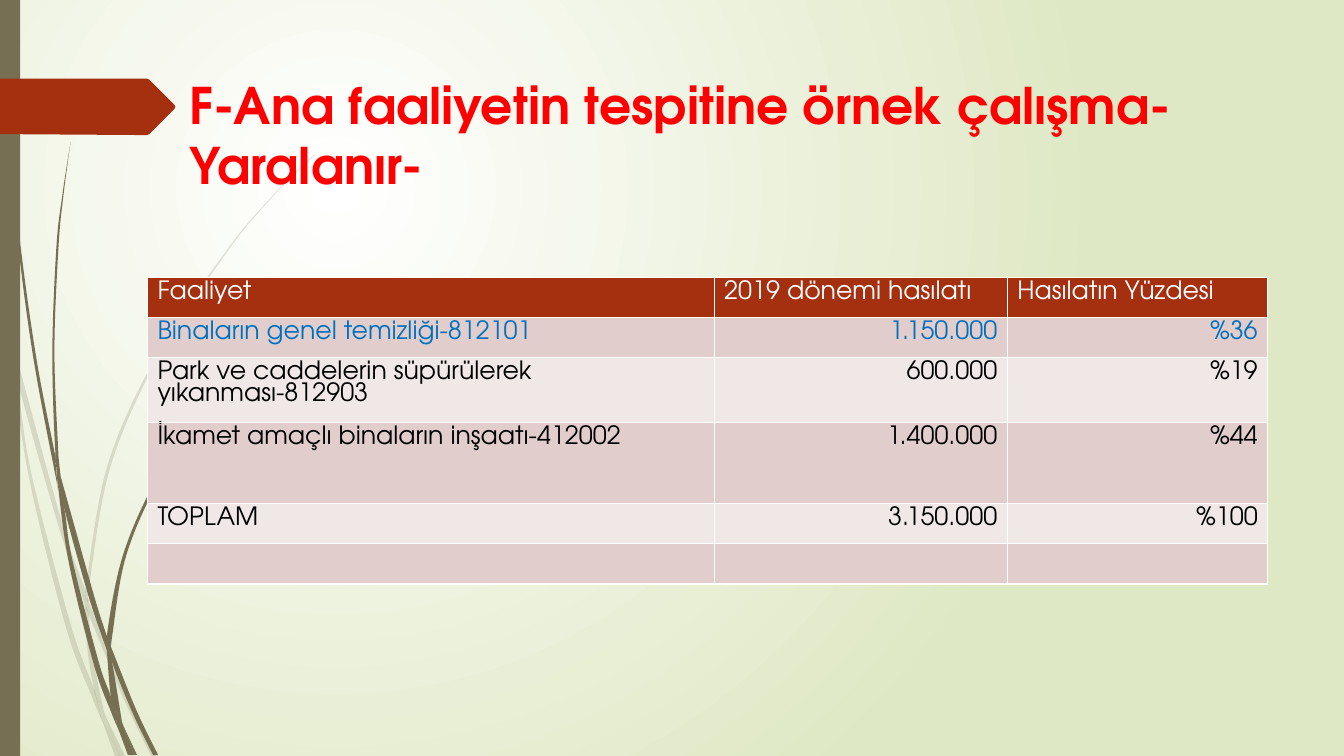
from typing import NamedTuple

from pptx import Presentation
from pptx.dml.color import RGBColor as Rgb
from pptx.enum.shapes import MSO_SHAPE as Kind
from pptx.enum.text import MSO_ANCHOR as Anchor, PP_ALIGN as Align
from pptx.oxml import parse_xml
from pptx.oxml.ns import nsdecls, qn
from pptx.util import Pt

FONT = "TeX Gyre Adventor"
HUES = {
    "white": "FFFFFF", "lime": "DFE8C4", "olive": "766F54", "rust": "A53010",
    "red": "FF0000", "blue": "0070C0", "black": "000000",
    "rose": "E1CDCC", "pale": "F0E8E7",
}
Edge = list[tuple[float, float]]


class Blade(NamedTuple):
    """A piece of grass: one edge out, the other edge back."""
    out: Edge
    back: Edge


class Row(NamedTuple):
    cells: tuple[str, str, str]
    high: float
    fill: str
    ink: str = "black"


FAINT = [
    Blade([(7.9, 252), (6.5, 231.8), (0, 203)], [(0, 215.3), (7.2, 247.7), (7.9, 252)]),
    Blade([(10.1, 248.4), (12.2, 270.7), (41.8, 375.8), (60.5, 431.3)],
          [(61.2, 421.9), (44.6, 374.4), (10.1, 248.4)]),
    Blade([(63.4, 429.1), (66.2, 437), (91.4, 498.2), (111.6, 540)],
          [(108, 540), (88.6, 499.7), (63.4, 439.2)]),
    Blade([(75.6, 511.9), (85.7, 540)], [(89.3, 540), (75.6, 511.9)]),
    Blade([(7.9, 252), (20.2, 338.4), (46.8, 447.1), (66.2, 499), (72.7, 514.1)],
          [(71.3, 509), (67, 491.8), (50.4, 445.7), (22.3, 337.7), (12.2, 270.7), (7.9, 252)]),
    Blade([(60.5, 431.3), (62.6, 465.1), (67, 491.8), (69.1, 498.2), (75.6, 511.9)],
          [(74.2, 508.3), (65.5, 465.1), (63.4, 439.2), (60.5, 431.3)]),
    Blade([(63.4, 429.1), (63.4, 420.5), (79.2, 332.6), (115.2, 251.3), (164.9, 176.4),
           (193, 142.6), (208.8, 126), (224.6, 110.9)],
          [(224.6, 110.2), (208.1, 126), (193, 141.8), (164.2, 175.7), (113.8, 250.6),
           (77, 331.9), (61.2, 420.5), (61.2, 421.9)]),
    Blade([(72.7, 514.1), (82.1, 540)], [(85.7, 540), (72.7, 514.1)]),
    Blade([(60.5, 431.3), (63.4, 439.2)], [(63.4, 429.1), (61.2, 421.9)]),
    Blade([(67, 491.8), (71.3, 509), (72.7, 514.1), (85.7, 540)],
          [(75.6, 511.9), (69.1, 498.2), (67, 491.8)]),
]
DARK = [
    Blade([(2.2, 0), (2.9, 34.6), (5, 79.2), (12.2, 167.8), (23.8, 255.6), (40.3, 343.4),
           (41, 346.3)],
          [(39.6, 329), (39.6, 326.2), (25.9, 255.6), (13.7, 167), (5.8, 78.5), (3.6, 34.6),
           (2.9, 0)]),
    Blade([(43.2, 339.8), (46.1, 363.6), (63.4, 426.2), (76.3, 464.4)],
          [(76.3, 454.3), (67, 424.8), (43.2, 339.8)]),
    Blade([(79.2, 461.5), (79.9, 472.3), (95, 509.8), (109.4, 539.3)],
          [(113, 539.3), (97.9, 508.3), (81.4, 467.3), (79.2, 461.5)]),
    Blade([(41, 343.4), (49, 401), (67, 474.5), (79.9, 509.8), (84.2, 519.8)],
          [(83.5, 516.2), (79.2, 497.5), (70.6, 473), (51.8, 400.3), (46.1, 363.6), (41, 343.4)]),
    Blade([(50.4, 101.5), (44.6, 139), (40.3, 176.4), (37.4, 251.3), (39.6, 323.3), (43.2, 339.8)],
          [(41.8, 326.2), (38.9, 251.3), (41.8, 176.4), (45.4, 139), (50.4, 101.5)]),
    Blade([(87.8, 517.7), (95.8, 539.3)], [(97.9, 539.3), (87.8, 517.7)]),
    Blade([(39.6, 323.3), (39.6, 326.2), (41, 343.4)],
          [(46.1, 363.6), (43.2, 339.8), (39.6, 323.3)]),
    Blade([(79.9, 455.8), (90, 397.4), (113.8, 342.7), (147.6, 292.3), (166.3, 269.3),
           (176.4, 258.5), (187.9, 247.7)],
          [(187.2, 247.7), (176.4, 257.8), (166.3, 268.6), (146.9, 291.6), (112.3, 341.3),
           (87.8, 396.7), (76.3, 454.3), (79.2, 461.5)]),
    Blade([(84.2, 519.8), (91.4, 539.3)], [(94.3, 539.3), (84.2, 519.8)]),
    Blade([(76.3, 464.4), (79.2, 497.5), (83.5, 508.3), (87.8, 517.7)],
          [(87.1, 515.5), (79.9, 472.3), (76.3, 464.4)]),
    Blade([(76.3, 464.4), (79.9, 472.3)], [(79.2, 461.5), (76.3, 454.3)]),
    Blade([(79.2, 497.5), (83.5, 516.2), (84.2, 519.8), (93.6, 539.3)],
          [(95.8, 539.3), (87.8, 517.7), (83.5, 508.3), (79.2, 497.5)]),
]
TAG = [(0, 56.2), (105.1, 56.2), (106.6, 56.9), (124.6, 74.9), (125.3, 76.3),
       (124.6, 77.8), (106.6, 95.8), (105.1, 96.5), (0, 95.8)]
COLS = (404.8, 209.5, 186)
ROWS = [
    Row(("Faaliyet", "2019 dönemi hasılatı", "Hasılatın Yüzdesi"), 28.8, "rust", "white"),
    Row(("Binaların genel temizliği-812101", "1.150.000", "%36"), 28.8, "rose", "blue"),
    Row(("Park ve caddelerin süpürülerek yıkanması-812903", "600.000", "%19"), 40.8, "pale"),
    Row(("İkamet amaçlı binaların inşaatı-412002", "1.400.000", "%44"), 57.8, "rose"),
    Row(("TOPLAM", "3.150.000", "%100"), 28.8, "pale"),
    Row(("", "", ""), 28.8, "rose"),
]


def hue(name: str) -> Rgb:
    return Rgb.from_string(HUES[name])


def paint(shape, name: str, alpha: int = 100) -> None:
    shape.shadow.inherit = False
    shape.line.fill.background()
    shape.fill.solid()
    shape.fill.fore_color.rgb = hue(name)
    if alpha < 100:
        tint = next(shape._element.spPr.iter(qn("a:srgbClr")))
        tint.append(parse_xml(f'<a:alpha {nsdecls("a")} val="{alpha * 1000}"/>'))


def outline(slide, pts: Edge, name: str, alpha: int = 100):
    spots = [(Pt(x), Pt(y)) for x, y in pts]
    pen = slide.shapes.build_freeform(*spots[0])
    pen.add_line_segments(spots[1:], close=True)
    shape = pen.convert_to_shape()
    paint(shape, name, alpha)
    return shape


def bends(edge: Edge) -> list[Edge]:
    """Bezier points of a Catmull-Rom curve, three for each stretch."""
    pts = [edge[0], *edge, edge[-1]]
    return [[(b[0] + (c[0] - a[0]) / 6, b[1] + (c[1] - a[1]) / 6),
             (c[0] - (d[0] - b[0]) / 6, c[1] - (d[1] - b[1]) / 6), c]
            for a, b, c, d in zip(pts, pts[1:], pts[2:], pts[3:])]


def grow(slide, blade: Blade, alpha: int) -> None:
    """Draw a blade, bending both of its edges."""
    shape = outline(slide, blade.out + blade.back, "olive", alpha)
    lines = list(shape._element.iter(qn("a:lnTo")))
    for line, bend in zip(lines, bends(blade.out) + [[]] + bends(blade.back)):
        if bend:
            dots = "".join(f'<a:pt x="{Pt(x) - shape.left}" y="{Pt(y) - shape.top}"/>'
                           for x, y in bend)
            line.getparent().replace(line, parse_xml(
                f'<a:cubicBezTo {nsdecls("a")}>{dots}</a:cubicBezTo>'))


def backdrop(slide) -> None:
    """Round gradient with its centre in the upper left."""
    fill = slide.background.fill
    fill.gradient()
    for stop, name, place in zip(fill.gradient_stops, ("white", "lime"), (0, 1)):
        stop.color.rgb = hue(name)
        stop.position = place
    line = next(slide._element.iter(qn("a:lin")))
    line.getparent().replace(line, parse_xml(
        f'<a:path {nsdecls("a")} path="circle">'
        '<a:fillToRect l="50000" t="50000" r="100000" b="100000"/></a:path>'))


def title(slide, text: str) -> None:
    frame = slide.shapes.add_textbox(Pt(128.2), Pt(49.3), Pt(777.6), Pt(100.8)).text_frame
    frame.word_wrap = True
    frame.vertical_anchor = Anchor.TOP
    para = frame.paragraphs[0]
    para.text = text
    font = para.font
    font.name, font.size, font.bold = FONT, Pt(36), True
    font.color.rgb = hue("red")


def border(cell) -> None:
    for side in "LRTB":
        cell._tc.get_or_add_tcPr().append(parse_xml(
            f'<a:ln{side} {nsdecls("a")} w="{Pt(1)}"><a:solidFill>'
            f'<a:srgbClr val="{HUES["white"]}"/></a:solidFill></a:ln{side}>'))


def table(slide) -> None:
    high = sum(row.high for row in ROWS)
    grid = slide.shapes.add_table(len(ROWS), len(COLS), Pt(105.3), Pt(198),
                                  Pt(sum(COLS)), Pt(high)).table
    for col, wide in zip(grid.columns, COLS):
        col.width = Pt(wide)
    for i, row in enumerate(ROWS):
        grid.rows[i].height = Pt(row.high)
        for j, text in enumerate(row.cells):
            cell = grid.cell(i, j)
            border(cell)
            cell.fill.solid()
            cell.fill.fore_color.rgb = hue(row.fill)
            para = cell.text_frame.paragraphs[0]
            para.text = text
            para.line_spacing = 0.9
            para.alignment = Align.RIGHT if i and j else Align.LEFT
            font = para.font
            font.name, font.size, font.bold = FONT, Pt(18), False
            font.color.rgb = hue(row.ink)


def main() -> None:
    deck = Presentation()
    deck.slide_width, deck.slide_height = Pt(960), Pt(540)
    slide = deck.slides.add_slide(deck.slide_layouts[6])
    backdrop(slide)
    for blades, alpha in ((FAINT, 20), (DARK, 100)):
        for blade in blades:
            grow(slide, blade, alpha)
    paint(slide.shapes.add_shape(Kind.RECTANGLE, 0, 0, Pt(14.4), Pt(540)), "olive")
    outline(slide, TAG, "rust")
    title(slide, "F-Ana faaliyetin tespitine örnek çalışma-Yaralanır-")
    table(slide)
    deck.save("out.pptx")


if __name__ == "__main__":
    main()
